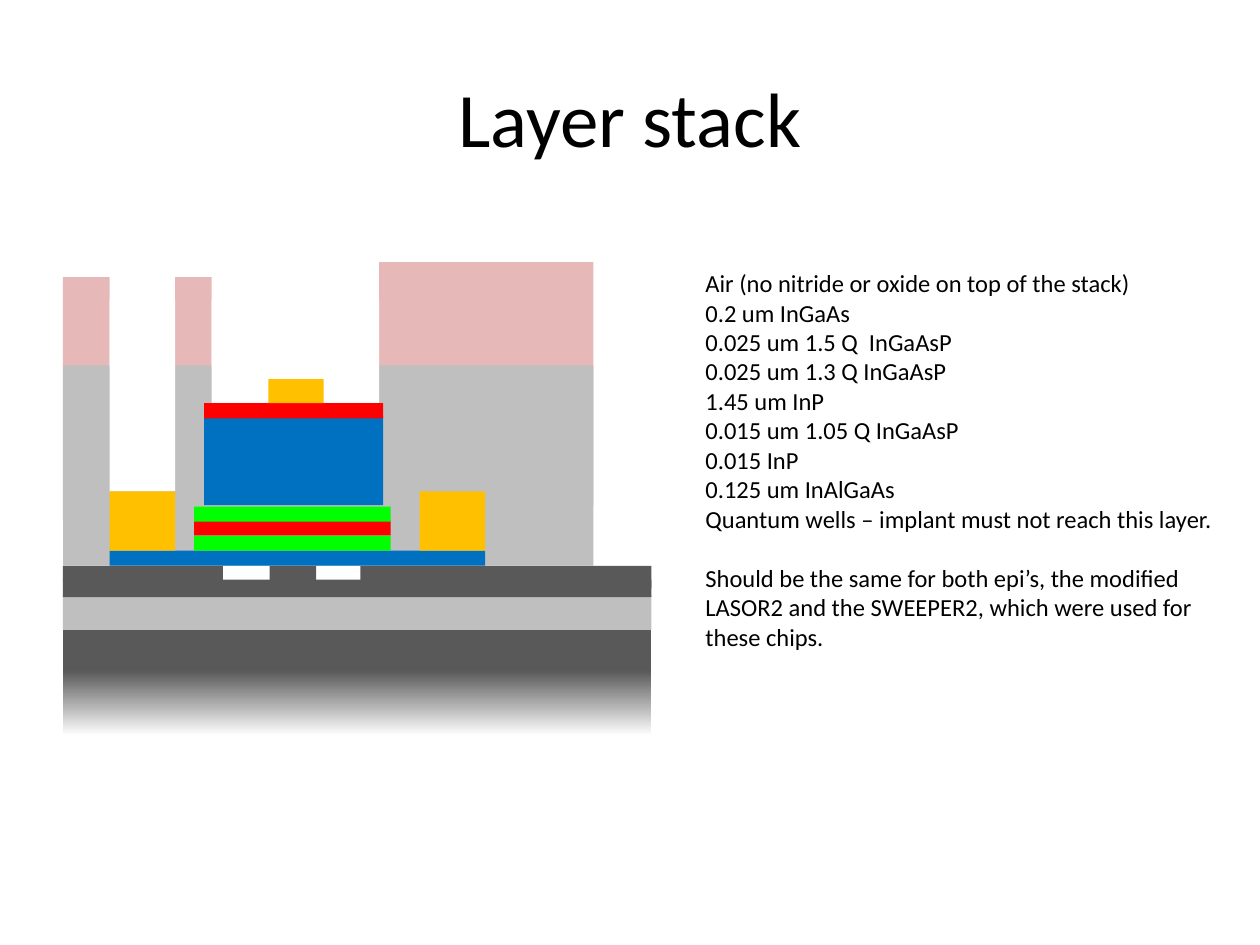
from pptx import Presentation
from pptx.dml.color import RGBColor as Color
from pptx.enum.shapes import MSO_SHAPE as Shape
from pptx.enum.text import MSO_ANCHOR as Anchor, PP_ALIGN as Align
from pptx.util import Inches, Pt

COLORS = {
    "text": "000000",
    "air": "FFFFFF",
    "polymer": "E6B9B8",
    "oxide": "BFBFBF",
    "silicon": "595959",
    "inp": "0070C0",
    "metal": "FFC000",
    "well": "FF0000",
    "cladding": "00FF00",
}

# Shared positions of the cross-section, in inches
LEFT, WIDTH = 0.5, 4.67
FILM = 0.12
WAVEGUIDE_TOP = 4.49

# Material, left, top, width, height, from back to front
SURROUNDINGS = [
    ("polymer", LEFT, 2.2, 0.37, 1.93),
    ("polymer", 1.39, 2.2, 0.29, 1.93),
    ("polymer", 3.01, 2.08, 1.7, 1.93),
    ("oxide", LEFT, 2.9, 4.21, 1.59),
    ("air", 0.87, 2.38, 0.52, 1.52),
    ("air", 1.68, 2.38, 1.33, 0.82),
]
WAFER = [
    ("inp", 0.87, 4.37, 2.98, FILM),
    ("oxide", LEFT, 4.72, WIDTH, 0.28),
    ("silicon", LEFT, 4.6, WIDTH, 0.14),
    ("silicon", LEFT, WAVEGUIDE_TOP, 1.27, FILM),
    ("silicon", 2.14, WAVEGUIDE_TOP, 0.37, FILM),
    ("silicon", 2.86, WAVEGUIDE_TOP, 2.31, 0.18),
]
MESA = [
    ("metal", 0.87, 3.9, 0.52, 0.47),
    ("cladding", 1.54, 4.25, 1.56, FILM),
    ("well", 1.54, 4.13, 1.56, FILM),
    ("cladding", 1.54, 4.02, 1.56, FILM),
    ("inp", 1.62, 3.31, 1.42, 0.7),
    ("metal", 3.33, 3.9, 0.52, 0.47),
    ("well", 1.62, 3.2, 1.42, FILM),
    ("metal", 2.13, 3.01, 0.44, 0.19),
]

STACK = [
    "Air (no nitride or oxide on top of the stack)",
    "0.2 um InGaAs",
    "0.025 um 1.5 Q  InGaAsP",
    "0.025 um 1.3 Q InGaAsP",
    "1.45 um InP",
    "0.015 um 1.05 Q InGaAsP",
    "0.015 InP",
    "0.125 um InAlGaAs",
    "Quantum wells – implant must not reach this layer.",
]
REMARK = ("Should be the same for both epi’s, the modified LASOR2 and the "
          "SWEEPER2, which were used for these chips.")


def color(name):
    return Color.from_string(COLORS[name])


def add_layer(group, material, *bounds):
    layer = group.shapes.add_shape(Shape.RECTANGLE, *map(Inches, bounds))
    layer.shadow.inherit = False
    layer.line.fill.background()
    layer.fill.solid()
    layer.fill.fore_color.rgb = color(material)
    return layer


def add_substrate(group):
    """Silicon that fades out downwards."""
    fill = add_layer(group, "silicon", LEFT, 4.9, WIDTH, 0.94).fill
    fill.gradient()
    fill.gradient_angle = 270
    stops = [(0.45, "silicon"), (1, "air")]
    for stop, (position, name) in zip(fill.gradient_stops, stops):
        stop.position = position
        stop.color.rgb = color(name)


def add_text(page, bounds, lines, size, align=Align.LEFT, anchor=Anchor.TOP):
    frame = page.shapes.add_textbox(*map(Inches, bounds)).text_frame
    frame.word_wrap = True
    frame.vertical_anchor = anchor
    frame.text = "\n".join(lines)
    for para in frame.paragraphs:
        para.alignment = align
        for span in para.runs:
            span.font.name = "Calibri"
            span.font.size = Pt(size)
            span.font.color.rgb = color("text")
    return frame


def main():
    deck = Presentation()
    deck.slide_width, deck.slide_height = Inches(10), Inches(7.5)
    page = deck.slides.add_slide(deck.slide_layouts[6])

    # Title
    add_text(page, (0.5, 0.3, 9, 1.25), ["Layer stack"], 44,
             Align.CENTER, Anchor.MIDDLE)

    # Cross-section of the chip
    group = page.shapes.add_group_shape()
    for layer in SURROUNDINGS:
        add_layer(group, *layer)
    add_substrate(group)
    for layer in WAFER + MESA:
        add_layer(group, *layer)

    # Layer list, with the remark one line below it
    notes = add_text(page, (5.5, 2.08, 4.42, 3.16), STACK + [REMARK], 14)
    notes.paragraphs[-1].space_before = Pt(17)

    deck.save("out.pptx")


if __name__ == "__main__":
    main()
